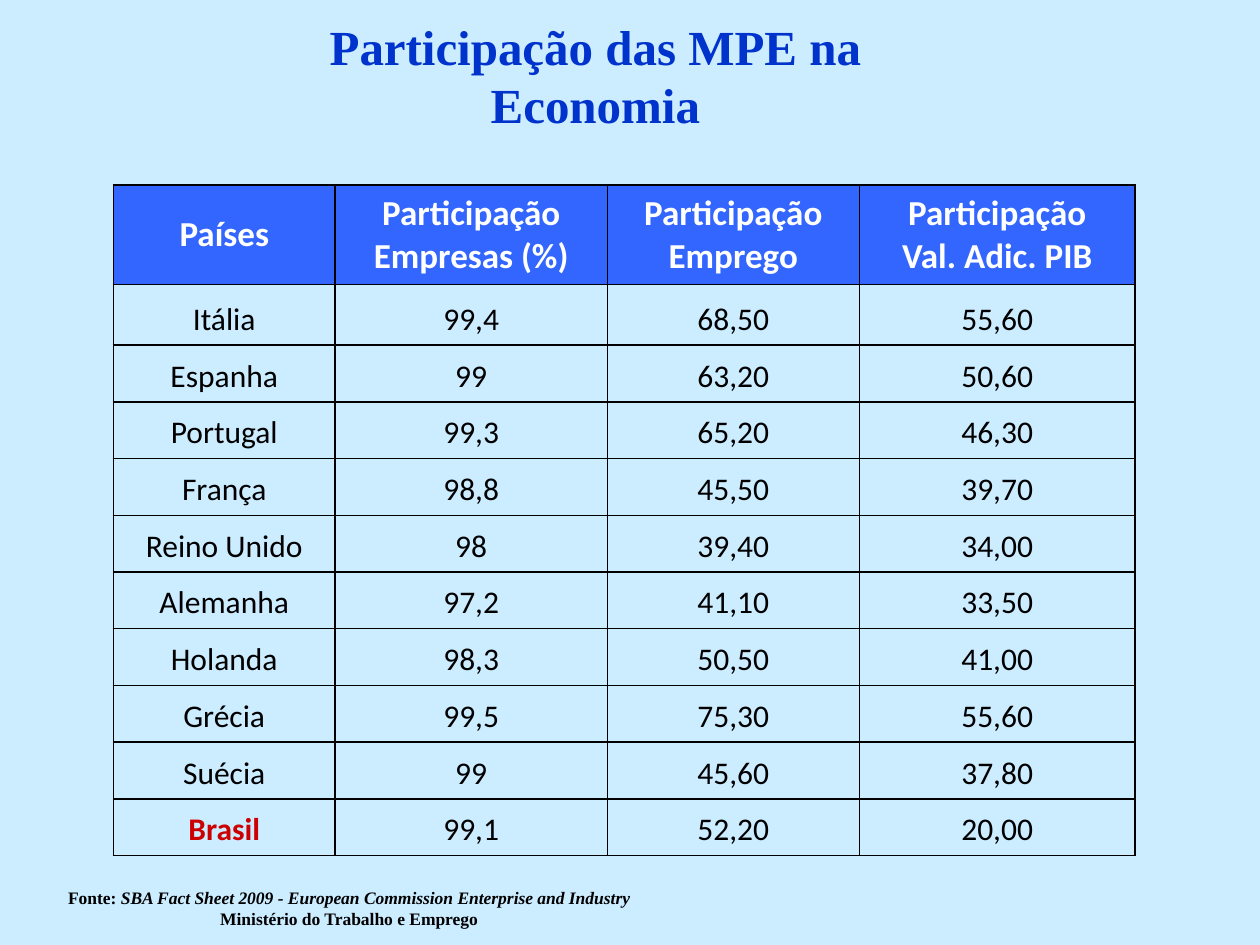
from lxml import etree
from pptx import Presentation
from pptx.dml.color import RGBColor
from pptx.enum.text import MSO_ANCHOR, PP_ALIGN
from pptx.oxml.ns import qn
from pptx.util import Inches, Pt

CENTER = PP_ALIGN.CENTER
MIDDLE = MSO_ANCHOR.MIDDLE
BOTTOM = MSO_ANCHOR.BOTTOM
TITLE_ONLY = 5
SANS = "Calibri"
SERIF = "Times New Roman"
BLACK = "000000"
HEADERS = [
    ["Países"],
    ["Participação", "Empresas (%)"],
    ["Participação Emprego"],
    ["Participação", "Val. Adic. PIB"],
]
COUNTRIES = [
    ("Itália", "99,4", "68,50", "55,60"),
    ("Espanha", "99", "63,20", "50,60"),
    ("Portugal", "99,3", "65,20", "46,30"),
    ("França", "98,8", "45,50", "39,70"),
    ("Reino Unido", "98", "39,40", "34,00"),
    ("Alemanha", "97,2", "41,10", "33,50"),
    ("Holanda", "98,3", "50,50", "41,00"),
    ("Grécia", "99,5", "75,30", "55,60"),
    ("Suécia", "99", "45,60", "37,80"),
    ("Brasil", "99,1", "52,20", "20,00"),
]
COLUMN_WIDTHS = [1.76, 2.16, 2, 2.19]
ROW_HEIGHTS = [0.79, 0.48] + [0.45] * 9


def rgb(color):
    """Turn a hex string into a colour."""
    return RGBColor.from_string(color)


def add_span(para, text, size, font, color, bold=False, italic=None):
    """Add one formatted run to a paragraph."""
    span = para.add_run()
    span.text = text
    span.font.size = Pt(size)
    span.font.name = font
    span.font.color.rgb = rgb(color)
    span.font.bold = bold
    span.font.italic = italic


def add_lines(frame, lines, size, font, color, bold=False):
    """Write centred paragraphs, each a list of (text, italic) pieces."""
    for index, pieces in enumerate(lines):
        para = frame.add_paragraph() if index else frame.paragraphs[0]
        para.alignment = CENTER
        for text, italic in pieces:
            add_span(para, text, size, font, color, bold, italic)


def place(shape, left, top, width, height):
    """Set the position and size of a shape."""
    shape.left, shape.top = Inches(left), Inches(top)
    shape.width, shape.height = Inches(width), Inches(height)


def add_title(page):
    """Fill and format the title placeholder."""
    title = page.shapes.title
    place(title, 1.64, 0.31, 6.17, 0.57)
    frame = title.text_frame
    frame.word_wrap = False
    frame.vertical_anchor = MIDDLE
    lines = [[("Participação das MPE na Economia", None)]]
    add_lines(frame, lines, 28, SERIF, "0033CC", True)


def set_borders(cell):
    """Draw a thin black line on every side of a cell."""
    properties = cell._tc.get_or_add_tcPr()
    for index, side in enumerate(("a:lnL", "a:lnR", "a:lnT", "a:lnB")):
        line = etree.Element(qn(side), w=str(Pt(1)))
        fill = etree.SubElement(line, qn("a:solidFill"))
        etree.SubElement(fill, qn("a:srgbClr"), val=BLACK)
        properties.insert(index, line)


def fill_cell(cell, lines, size, color, bold, anchor, background=None):
    """Write and format one table cell."""
    if background:
        cell.fill.solid()
        cell.fill.fore_color.rgb = rgb(background)
    else:
        cell.fill.background()
    set_borders(cell)
    cell.vertical_anchor = anchor
    pieces = [[(line, None)] for line in lines]
    add_lines(cell.text_frame, pieces, size, SANS, color, bold)


def add_country_table(page):
    """Add the table of shares by country."""
    frame = page.shapes.add_table(
        len(ROW_HEIGHTS), len(COLUMN_WIDTHS),
        Inches(0.9), Inches(1.47),
        Inches(sum(COLUMN_WIDTHS)), Inches(sum(ROW_HEIGHTS)))
    table = frame.table
    table.horz_banding = False
    for column, width in zip(table.columns, COLUMN_WIDTHS):
        column.width = Inches(width)
    for row, height in zip(table.rows, ROW_HEIGHTS):
        row.height = Inches(height)
    for column, lines in enumerate(HEADERS):
        fill_cell(table.cell(0, column), lines, 20, "FFFFFF", True, MIDDLE, "3366FF")
    for row, values in enumerate(COUNTRIES, start=1):
        for column, value in enumerate(values):
            highlight = value == "Brasil"
            color = "CC0000" if highlight else BLACK
            fill_cell(table.cell(row, column), [value], 18, color, highlight, BOTTOM)


def add_source_note(page):
    """Add the note that names the data sources."""
    box = page.shapes.add_textbox(
        Inches(0.51), Inches(7.02), Inches(4.5), Inches(0.35))
    frame = box.text_frame
    frame.word_wrap = False
    frame.margin_left = frame.margin_top = Inches(0.02)
    frame.margin_right = frame.margin_bottom = 0
    lines = [
        [("Fonte: ", None),
         ("SBA Fact Sheet 2009 - European Commission Enterprise and Industry", True)],
        [("Ministério do Trabalho e Emprego", None)],
    ]
    add_lines(frame, lines, 10, SERIF, BLACK, True)


def main():
    """Build the deck and save it."""
    deck = Presentation()
    deck.slide_width, deck.slide_height = Inches(10), Inches(7.5)
    page = deck.slides.add_slide(deck.slide_layouts[TITLE_ONLY])
    page.background.fill.solid()
    page.background.fill.fore_color.rgb = rgb("CCECFF")
    add_country_table(page)
    add_title(page)
    add_source_note(page)
    deck.save("out.pptx")


if __name__ == "__main__":
    main()
